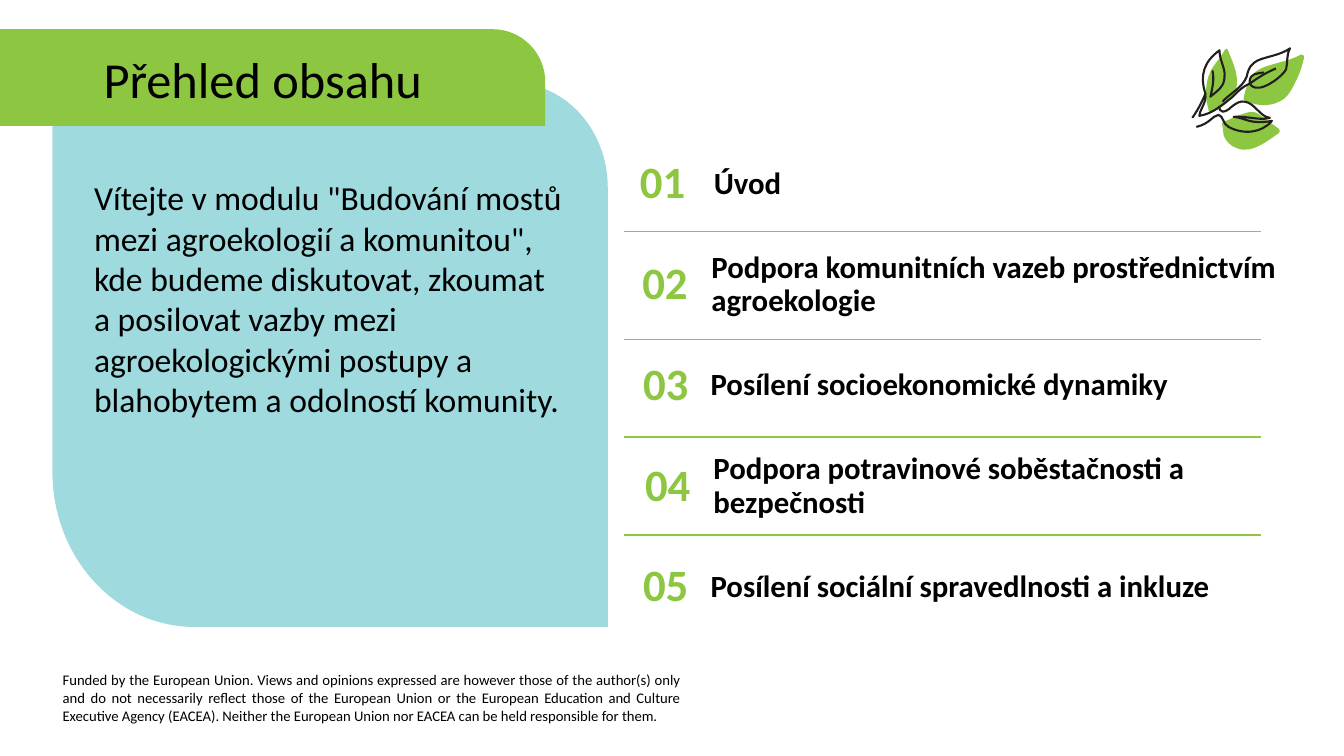
from lxml.etree import SubElement
from pptx import Presentation
from pptx.dml.color import RGBColor as RGB
from pptx.enum.shapes import MSO_CONNECTOR as Link
from pptx.enum.text import MSO_ANCHOR as Anchor, PP_ALIGN as Align
from pptx.oxml.ns import qn
from pptx.util import Cm, Pt

HUE = {"green": "8DC641", "aqua": "9FDADF", "ink": "231F20", "black": "000000"}
TITLE = "Přehled obsahu"
INTRO = (
    'Vítejte v modulu "Budování mostů mezi agroekologií a komunitou", '
    "kde budeme diskutovat, zkoumat a posilovat vazby mezi "
    "agroekologickými postupy a blahobytem a odolností komunity."
)
FUNDS = (
    "Funded by the European Union. Views and opinions expressed are however "
    "those of the author(s) only and do not necessarily reflect those of the "
    "European Union or the European Education and Culture Executive Agency "
    "(EACEA). Neither the European Union nor EACEA can be held responsible for them."
)
TOPICS = [
    ("Úvod", 15.72, 17.74, 12.4),
    ("Podpora komunitních vazeb prostřednictvím agroekologie", 15.78, 17.68, 16.2),
    ("Posílení socioekonomické dynamiky", 15.8, 17.66, 14.5),
    ("Podpora potravinové soběstačnosti a bezpečnosti", 15.85, 17.73, 15.19),
    ("Posílení sociální spravedlnosti a inkluze", 15.8, 17.66, 15.19),
]
RULES = [5.84, 8.56, 11.01, 13.48]
UNIT = 0.0254

PANEL = [(603, 622), (193, 622), (115, 622, 52, 553, 52, 468), (52, 82),
         (508, 82), (561, 82, 603, 129, 603, 186)]
BANNER = [(-2, 29), (489, 29), (518, 29, 541, 53, 541, 81), (541, 125),
          (0, 125), (0, 48), (0, 44, 0, 41, -1, 37)]
LEAVES = [
    [(1205, 110), (1215, 105, 1225, 97, 1227, 86), (1229, 74, 1223, 61, 1218, 49),
     (1218, 48, 1215, 48, 1215, 50), (1212, 56, 1208, 60, 1204, 66),
     (1201, 70, 1199, 75, 1198, 80), (1196, 89, 1196, 99, 1199, 108),
     (1198, 109, 1200, 112, 1202, 111)],
    [(1274, 98), (1280, 93, 1283, 86, 1286, 80), (1290, 72, 1292, 65, 1294, 57),
     (1294, 55, 1293, 54, 1291, 54), (1284, 58, 1277, 60, 1269, 62),
     (1263, 64, 1257, 65, 1251, 68), (1246, 70, 1242, 74, 1240, 79),
     (1237, 85, 1235, 91, 1234, 97), (1233, 99, 1234, 100, 1236, 100),
     (1248, 106, 1263, 106, 1274, 98)],
    [(1269, 132), (1270, 131, 1270, 129, 1269, 128), (1264, 124, 1259, 121, 1254, 117),
     (1250, 114, 1247, 111, 1242, 111), (1238, 111, 1234, 113, 1230, 114),
     (1226, 116, 1222, 117, 1219, 119), (1217, 119, 1215, 121, 1213, 121),
     (1212, 122, 1212, 124, 1213, 125), (1213, 128, 1214, 132, 1214, 134),
     (1216, 140, 1221, 145, 1227, 147), (1242, 153, 1257, 140, 1269, 132)],
]
STEMS = [
    [(1183, 117), (1190, 107, 1194, 98, 1196, 93), (1190, 74, 1195, 61, 1210, 50),
     (1210, 60, 1216, 68, 1215, 76), (1215, 86, 1208, 90, 1201, 96),
     (1203, 87, 1205, 79, 1203, 70)],
    [(1196, 93), (1197, 103, 1191, 107, 1190, 115), (1203, 113, 1213, 104, 1222, 97),
     (1229, 90, 1233, 86, 1240, 83), (1246, 79, 1252, 74, 1266, 68)],
    [(1213, 101), (1220, 93, 1233, 87, 1237, 76), (1239, 67, 1241, 64, 1248, 60),
     (1257, 56, 1270, 55, 1280, 48), (1276, 55, 1278, 62, 1276, 69),
     (1272, 76, 1258, 86, 1250, 87), (1244, 88, 1239, 85, 1240, 80),
     (1241, 73, 1247, 73, 1254, 72)],
    [(1210, 105), (1209, 112, 1215, 113, 1222, 106), (1227, 102, 1231, 100, 1235, 101),
     (1245, 102, 1250, 116, 1260, 117), (1250, 120, 1238, 115, 1224, 116),
     (1236, 117, 1240, 124, 1262, 120), (1252, 132, 1234, 134, 1219, 126),
     (1213, 123, 1214, 115, 1209, 114), (1203, 115, 1200, 123, 1187, 126)],
]


def dots(part):
    return [(Cm(part[i] * UNIT), Cm(part[i + 1] * UNIT)) for i in range(0, len(part), 2)]


def bend(shape, parts):
    legs = iter(list(shape._element.iter(qn("a:lnTo"))))
    for part in parts:
        leg = next(legs)
        if len(part) == 6:
            leg.tag = qn("a:cubicBezTo")
            for _ in range(2):
                rest = next(legs)
                leg.append(rest[0])
                rest.getparent().remove(rest)


def draw(home, paths, hue, closed=True):
    pen = home.build_freeform(*dots(paths[0][0])[0])
    for i, path in enumerate(paths):
        if i:
            pen.move_to(*dots(path[0])[0])
        pen.add_line_segments([dot for part in path[1:] for dot in dots(part)], close=closed)
    shape = pen.convert_to_shape()
    bend(shape, [part for path in paths for part in path[1:]])
    shape.shadow.inherit = False
    if closed:
        shape.fill.solid()
        shape.fill.fore_color.rgb = RGB.from_string(HUE[hue])
        shape.line.fill.background()
    else:
        shape.fill.background()
        shape.line.color.rgb = RGB.from_string(HUE[hue])
        shape.line.width = Pt(1.5)


def write(home, text, box, size, hue="black", bold=False, anchor=Anchor.MIDDLE,
          align=Align.LEFT, pitch=0.9, inset=0):
    frame = home.add_textbox(*map(Cm, box)).text_frame
    frame.word_wrap = True
    frame.vertical_anchor = anchor
    para = frame.paragraphs[0]
    para.text = text
    for key, val in {"alignment": align, "line_spacing": pitch}.items():
        setattr(para, key, val)
    if inset:
        para._p.get_or_add_pPr().set("marL", str(Cm(inset)))
    font = para.runs[0].font
    for key, val in {"name": "Calibri", "size": Pt(size), "bold": bold}.items():
        setattr(font, key, val)
    font.color.rgb = RGB.from_string(HUE[hue])


def main():
    deck = Presentation()
    deck.slide_width, deck.slide_height = Cm(33.87), Cm(19.05)
    home = deck.slides.add_slide(deck.slide_layouts[6]).shapes

    draw(home, [PANEL], "aqua")
    draw(home, [BANNER], "green")
    for y in RULES:
        rule = home.add_connector(Link.STRAIGHT, Cm(31.78), Cm(y), Cm(15.72), Cm(y))
        rule.line.color.rgb = RGB.from_string(HUE["green"])
        rule.line.width = Pt(1)
        SubElement(rule._element.spPr, qn("a:effectLst"))

    write(home, TITLE, (2.36, 1.07, 14, 2.01), 36)
    write(home, INTRO, (1.48, 4.34, 12.98, 11.89), 24,
          anchor=Anchor.TOP, pitch=1.0, inset=0.64)
    for i, (topic, num, left, wide) in enumerate(TOPICS):
        top = 3.69 + 2.54 * i
        write(home, f"{i + 1:02}", (num, top, 1.96, 1.9), 32, "green", True,
              align=Align.CENTER)
        write(home, topic, (left, top, wide, 1.9), 22, bold=True)
    write(home, FUNDS, (1.33, 16.79, 16.08, 1.68), 10.5,
          anchor=Anchor.TOP, align=Align.JUSTIFY, pitch=1.0)

    sprig = home.add_group_shape().shapes
    for leaf in LEAVES:
        draw(sprig, [leaf], "green")
    draw(sprig, STEMS, "ink", closed=False)

    deck.save("out.pptx")


if __name__ == "__main__":
    main()
